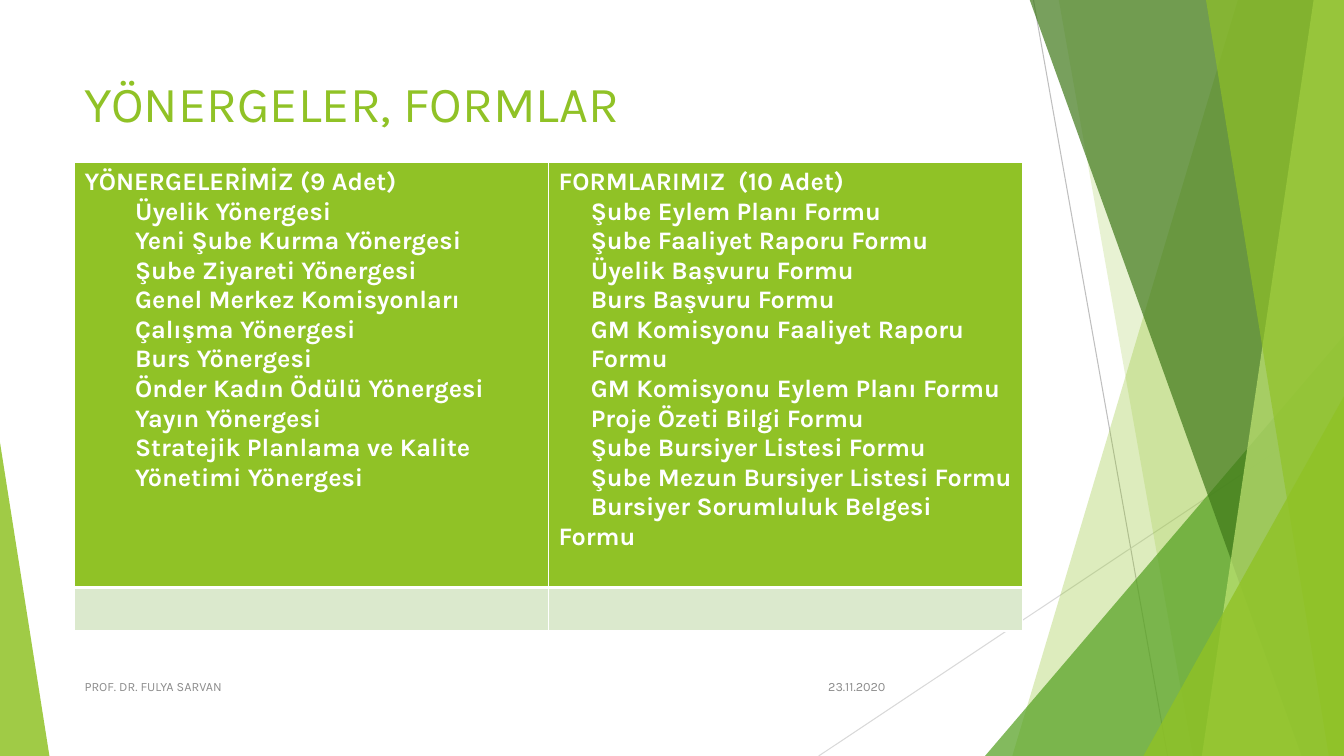
from lxml import etree
from pptx import Presentation
from pptx.dml.color import RGBColor
from pptx.enum.shapes import MSO_CONNECTOR, MSO_SHAPE
from pptx.enum.text import MSO_ANCHOR, PP_ALIGN
from pptx.oxml.ns import qn
from pptx.util import Inches, Pt

STRAIGHT = MSO_CONNECTOR.STRAIGHT
TRIANGLE = MSO_SHAPE.ISOSCELES_TRIANGLE
TOP, MIDDLE = MSO_ANCHOR.TOP, MSO_ANCHOR.MIDDLE
LEFT, RIGHT = PP_ALIGN.LEFT, PP_ALIGN.RIGHT

TITLE = "YÖNERGELER, FORMLAR"
AUTHOR = "PROF. DR. FULYA SARVAN"
DATE = "23.11.2020"
DIRECTIVES = [
    "YÖNERGELERİMİZ (9 Adet)",
    "Üyelik Yönergesi",
    "Yeni Şube Kurma Yönergesi",
    "Şube Ziyareti Yönergesi",
    "Genel Merkez Komisyonları Çalışma Yönergesi",
    "Burs Yönergesi",
    "Önder Kadın Ödülü Yönergesi",
    "Yayın Yönergesi",
    "Stratejik Planlama ve Kalite Yönetimi Yönergesi",
]
FORMS = [
    "FORMLARIMIZ  (10 Adet)",
    "Şube Eylem Planı Formu",
    "Şube Faaliyet Raporu Formu",
    "Üyelik Başvuru Formu",
    "Burs Başvuru Formu",
    "GM Komisyonu Faaliyet Raporu",
    "Formu",
    "GM Komisyonu Eylem Planı Formu",
    "Proje Özeti Bilgi Formu",
    "Şube Bursiyer Listesi Formu",
    "Şube Mezun Bursiyer Listesi Formu",
    "Bursiyer Sorumluluk Belgesi Formu",
]

THEME = {
    "font": "Karla", "title_size": 36, "table_size": 18, "footer_size": 9,
    "green": "90C226", "mid_green": "54A021", "dark_green": "3F7819",
    "lime": "C0E474", "pale": "DBE9CD", "white": "FFFFFF",
    "footer": "8C8C8C", "line": "BFBFBF", "light_line": "D9D9D9",
}

WIDTH, HEIGHT, BAND_TOP = 13.33, 7.5, -0.01
MARGIN, CONTENT_WIDTH = 0.74, 9.4
ROW_HEIGHTS = (4.22, 0.43)
# Start point, end point, colour
RAYS = [((10.25, 0), (11.58, HEIGHT), "line"),
        ((WIDTH, 4.03), (8.12, HEIGHT), "light_line")]
# Bands reach the right edge: left x at top, left x at bottom, colour, opacity.
# Triangles stand on the bottom edge: left, top, width, apex, colour, opacity.
FACETS = [
    ("band", 12.28, 10.04, "green", 30),
    ("band", 10.5, 11.83, "green", 20),
    ("triangle", 9.77, 3.33, 3.56, 1, "mid_green", 72),
    ("band", 10.21, 12.91, "dark_green", 70),
    ("band", 13.03, 11.92, "lime", 70),
    ("band", 11.96, 13.18, "green", 65),
    ("triangle", 11.34, 3.93, 1.99, 1, "green", 80),
    ("triangle", 0, 4.39, 0.49, 0, "green", 85),
]


def color(name):
    return RGBColor.from_string(THEME[name])


def paint(shape, name, opacity):
    shape.shadow.inherit = False
    shape.fill.solid()
    shape.fill.fore_color.rgb = color(name)
    shape.line.fill.background()
    rgb = shape.fill._xPr.find(qn("a:solidFill")).find(qn("a:srgbClr"))
    etree.SubElement(rgb, qn("a:alpha"), val=str(opacity * 1000))


def add_ray(slide, start, end, name):
    ray = slide.shapes.add_connector(STRAIGHT, *map(Inches, start + end))
    ray.line.color.rgb = color(name)
    ray.line.width = Pt(0.75)
    etree.SubElement(ray._element.spPr, qn("a:effectLst"))


def add_band(slide, top_x, bottom_x, name, opacity):
    corners = [(top_x, BAND_TOP), (WIDTH, BAND_TOP), (WIDTH, HEIGHT), (bottom_x, HEIGHT)]
    points = [(Inches(x), Inches(y)) for x, y in corners]
    builder = slide.shapes.build_freeform(*points[0])
    builder.add_line_segments(points[1:], close=True)
    paint(builder.convert_to_shape(), name, opacity)


def add_triangle(slide, left, top, width, apex, name, opacity):
    shape = slide.shapes.add_shape(
        TRIANGLE, *map(Inches, (left, top, width, HEIGHT - top)))
    shape.adjustments[0] = apex
    paint(shape, name, opacity)


def write(paragraph, text, size, name, bold=False, align=LEFT, margin=0, indent=0):
    paragraph.alignment = align
    properties = paragraph._p.get_or_add_pPr()
    properties.set("marL", str(Inches(margin)))
    properties.set("indent", str(Inches(indent)))
    run = paragraph.add_run()
    run.text = text
    run.font.name = THEME["font"]
    run.font.size = Pt(THEME[size])
    run.font.bold = bold
    run.font.color.rgb = color(name)


def add_label(slide, box, text, size, name, anchor=MIDDLE, align=LEFT):
    frame = slide.shapes.add_textbox(*map(Inches, box)).text_frame
    frame.word_wrap = True
    frame.vertical_anchor = anchor
    write(frame.paragraphs[0], text, size, name, align=align)


def style_cell(cell, name, bottom_width, top_width):
    cell.fill.solid()
    cell.fill.fore_color.rgb = color(name)
    properties = cell._tc.get_or_add_tcPr()
    widths = {"lnL": 1, "lnR": 1, "lnT": top_width, "lnB": bottom_width}
    for position, (edge, width) in enumerate(widths.items()):
        line = etree.Element(qn("a:" + edge), w=str(Pt(width)))
        fill = etree.SubElement(line, qn("a:solidFill"))
        etree.SubElement(fill, qn("a:srgbClr"), val=THEME["white"])
        properties.insert(position, line)


def fill_cell(cell, lines, **item_format):
    frame = cell.text_frame
    for index, text in enumerate(lines):
        paragraph = frame.add_paragraph() if index else frame.paragraphs[0]
        write(paragraph, text, "table_size", "white", bold=True,
              **(item_format if index else {}))


def add_lists(slide):
    box = (MARGIN, 1.61, CONTENT_WIDTH, sum(ROW_HEIGHTS))
    table = slide.shapes.add_table(2, 2, *map(Inches, box)).table
    table.horz_banding = False
    for row, height in zip(table.rows, ROW_HEIGHTS):
        row.height = Inches(height)
    for column in range(2):
        table.columns[column].width = Inches(CONTENT_WIDTH / 2)
        style_cell(table.cell(0, column), "green", 3, 1)
        style_cell(table.cell(1, column), "pale", 1, 3)
    fill_cell(table.cell(0, 0), DIRECTIVES, margin=0.5)
    fill_cell(table.cell(0, 1), FORMS, indent=0.32)


def main():
    presentation = Presentation()
    presentation.slide_width = Inches(WIDTH)
    presentation.slide_height = Inches(HEIGHT)
    slide = presentation.slides.add_slide(presentation.slide_layouts[6])
    for ray in RAYS:
        add_ray(slide, *ray)
    draw = {"band": add_band, "triangle": add_triangle}
    for kind, *facet in FACETS:
        draw[kind](slide, *facet)
    add_label(slide, (MARGIN, 0.67, CONTENT_WIDTH, 0.94), TITLE, "title_size", "green", anchor=TOP)
    add_lists(slide)
    add_label(slide, (7.88, 6.61, 1, 0.4), DATE, "footer_size", "footer", align=RIGHT)
    add_label(slide, (MARGIN, 6.61, 6.89, 0.4), AUTHOR, "footer_size", "footer")
    presentation.save("out.pptx")


if __name__ == "__main__":
    main()
